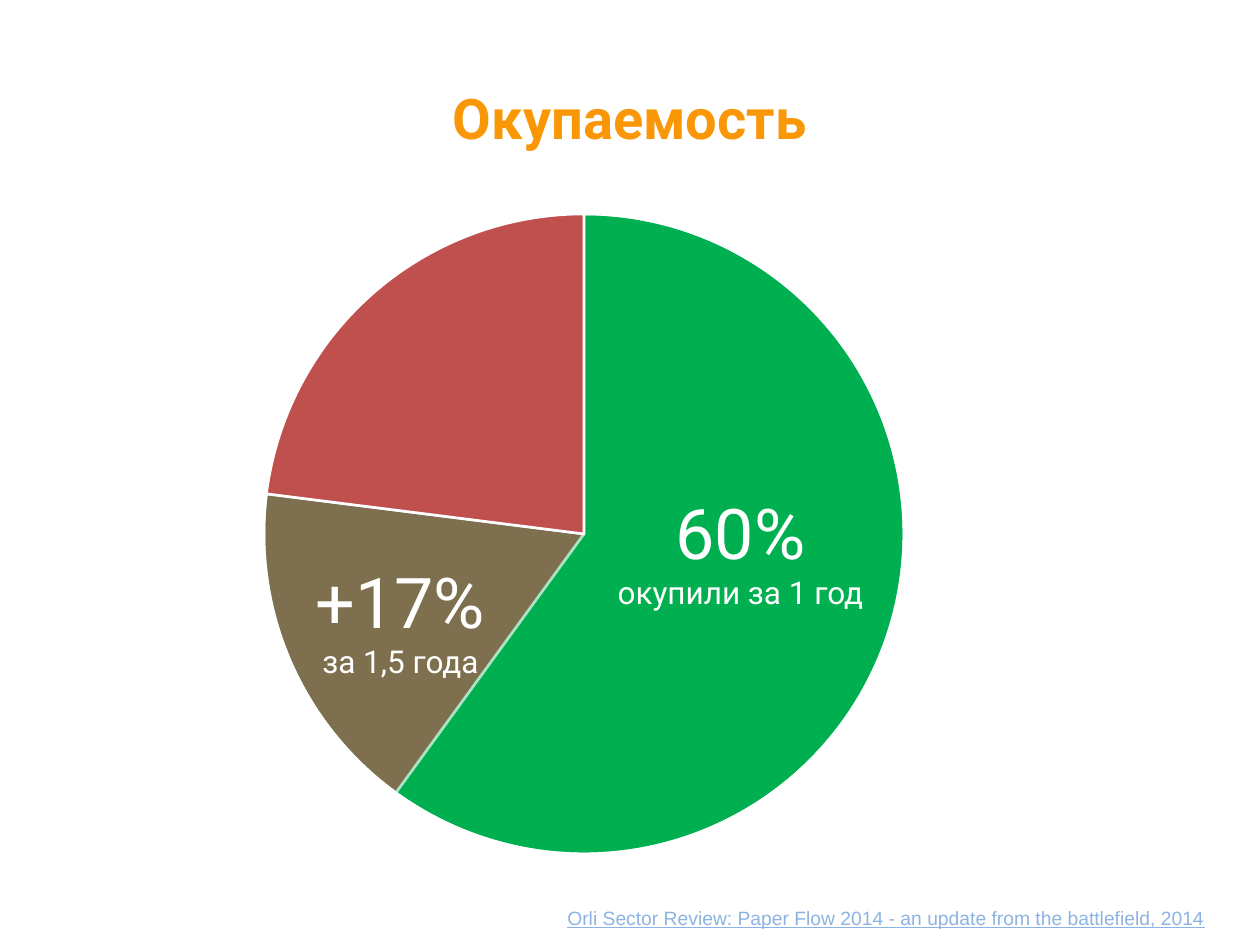
from lxml import etree
from pptx import Presentation
from pptx.chart.data import CategoryChartData as ChartData
from pptx.dml.color import RGBColor
from pptx.enum.chart import XL_CHART_TYPE as ChartType
from pptx.enum.text import MSO_ANCHOR as Anchor, PP_ALIGN as Align
from pptx.oxml import parse_xml
from pptx.oxml.ns import nsdecls, qn
from pptx.util import Emu, Pt

PX = 914400 / 126  # EMU in one px
GREEN, RED, WHITE, ORANGE, SKY = "00B050", "C0504D", "FFFFFF", "FA9706", "8DB3E2"


def px(*lengths):
    return [Emu(round(length * PX)) for length in lengths]


def color(hex_string):
    return RGBColor.from_string(hex_string)


def add_line(frame, text, first=False, size=18, font="Roboto", fill=WHITE,
             bold=False, underline=False, align=Align.CENTER):
    paragraph = frame.paragraphs[0] if first else frame.add_paragraph()
    paragraph.alignment = align
    run = paragraph.add_run()
    run.text = text
    run.font.name, run.font.size = font, Pt(size)
    run.font.bold, run.font.underline = bold, underline
    run.font.color.rgb = color(fill)


def add_frame(slide, box, anchor=Anchor.TOP):
    frame = slide.shapes.add_textbox(*px(*box)).text_frame
    frame.word_wrap = True
    frame.vertical_anchor = anchor
    return frame


def add_title(slide, box, text):
    frame = add_frame(slide, box, Anchor.MIDDLE)
    add_line(frame, text, first=True, size=32, fill=ORANGE, bold=True)


def add_share(slide, box, value, caption):
    frame = add_frame(slide, box)
    add_line(frame, value, first=True, size=40)
    add_line(frame, caption)


def add_source(slide, box, text):
    frame = add_frame(slide, box)
    add_line(frame, text, first=True, size=11, font="Arial", fill=SKY,
             underline=True, align=Align.LEFT)


def fit_plot(chart, width, height, diameter):
    """Centre a pie of the given diameter and clear the chart background."""
    fractions = {
        "x": (width - diameter) / 2 / width,
        "y": (height - diameter) / 2 / height,
        "w": diameter / width,
        "h": diameter / height,
    }
    modes = '<c:layoutTarget val="inner"/><c:xMode val="edge"/><c:yMode val="edge"/>'
    values = "".join(f'<c:{key} val="{value:.4f}"/>' for key, value in fractions.items())
    plot_area = chart.element.find(".//" + qn("c:plotArea"))
    for layout in plot_area.findall(qn("c:layout")):
        plot_area.remove(layout)
    plot_area.insert(0, parse_xml(
        f'<c:layout {nsdecls("c")}><c:manualLayout>{modes}{values}</c:manualLayout></c:layout>'))
    chart.element.find(qn("c:chart")).addnext(parse_xml(
        f'<c:spPr {nsdecls("c", "a")}><a:noFill/><a:ln><a:noFill/></a:ln></c:spPr>'))


def add_pie(slide, box, values, opacity=100):
    data = ChartData()
    data.categories = ["1", "2"]
    data.add_series("Series 1", values)
    chart = slide.shapes.add_chart(ChartType.PIE, *px(*box), data).chart
    chart.has_legend = chart.has_title = False
    chart.font.name, chart.font.size = "Calibri", Pt(10)
    chart.font.color.rgb = color("000000")
    plot = chart.plots[0]
    plot.vary_by_categories = True
    for index, fill in enumerate((GREEN, RED)):
        slice_format = plot.series[0].points[index].format
        slice_format.fill.solid()
        slice_format.fill.fore_color.rgb = color(fill)
        slice_format.line.color.rgb = color(WHITE)
        slice_format.line.width = Pt(1.5)
    if opacity < 100:
        point = chart.element.find(".//" + qn("c:dPt"))
        fill_color = point.find(f"{qn('c:spPr')}/{qn('a:solidFill')}/{qn('a:srgbClr')}")
        etree.SubElement(fill_color, qn("a:alpha")).set("val", str(opacity * 1000))
    fit_plot(chart, box[2], box[3], diameter=640)


def main():
    presentation = Presentation()
    presentation.slide_width, presentation.slide_height = px(1260, 945)
    slide = presentation.slides.add_slide(presentation.slide_layouts[6])

    # Pies: one year below, a year and a half as a translucent layer above
    pie_box = (88, 195, 992, 678)
    add_pie(slide, pie_box, (60, 40))
    add_pie(slide, pie_box, (77, 23), opacity=34)

    # Shares on the slices
    add_share(slide, (251, 552, 299, 136), "+17%", "за 1,5 года")
    add_share(slide, (591, 483, 299, 136), "60%", "окупили за 1 год")

    # Title and source
    add_title(slide, (63, 38, 1134, 158), "Окупаемость")
    add_source(slide, (555, 900, 705, 36),
               "Orli Sector Review: Paper Flow 2014 - an update from the battlefield, 2014")

    presentation.save("out.pptx")


if __name__ == "__main__":
    main()
